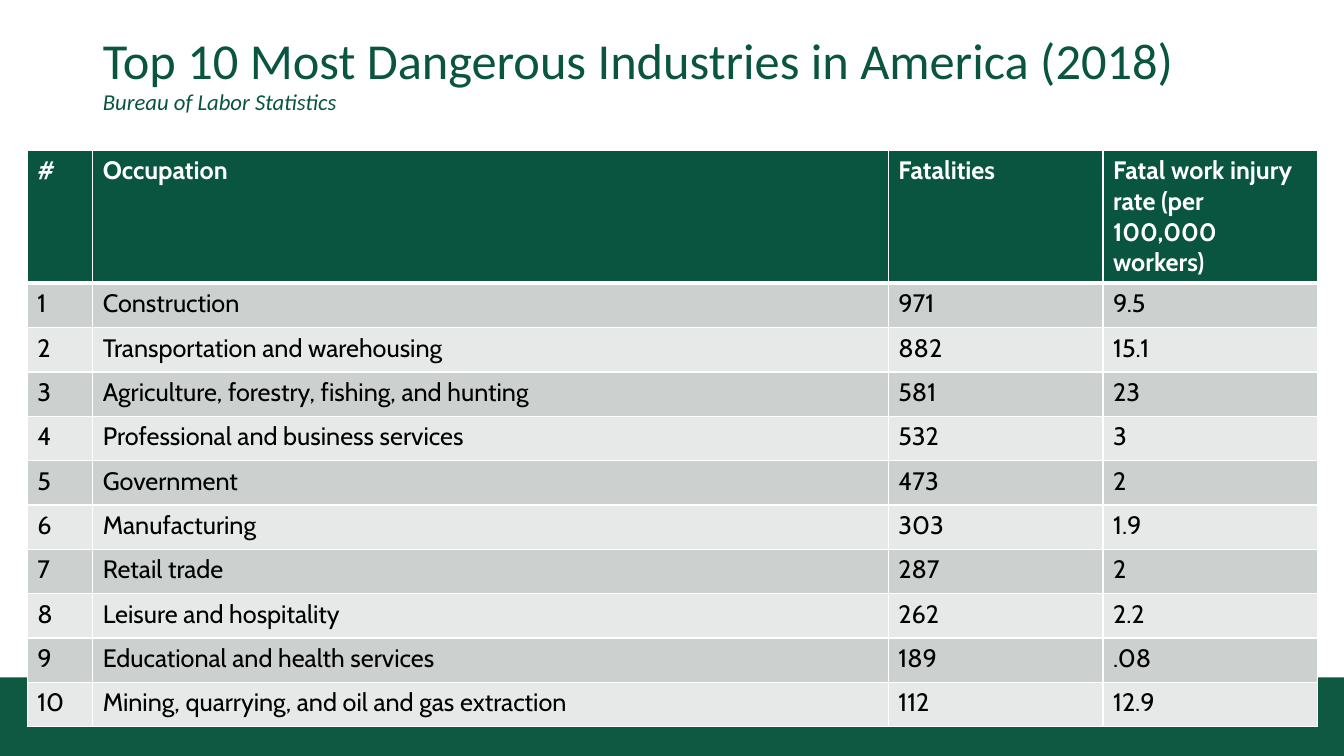
import pptx
import pptx.dml.color
import pptx.enum.shapes
import pptx.enum.text
import pptx.oxml
import pptx.oxml.ns
import pptx.util
from pptx.util import Inches

RGBColor = pptx.dml.color.RGBColor
GREEN = RGBColor(0x09, 0x55, 0x40)
FOOTER_GREEN = RGBColor(0x0F, 0x58, 0x42)
WHITE = RGBColor(0xFF, 0xFF, 0xFF)
BLACK = RGBColor(0x00, 0x00, 0x00)
DARK_BAND = RGBColor(0xCC, 0xD1, 0xCF)
LIGHT_BAND = RGBColor(0xE7, 0xE9, 0xE8)

COLUMN_WIDTHS = (0.65, 7.89, 2.13, 2.13)
ROW_HEIGHT = 0.44
HEADER = ("#", "Occupation", "Fatalities", "Fatal work injury rate (per 100,000 workers)")
INDUSTRIES = (
    ("Construction", "971", "9.5"),
    ("Transportation and warehousing", "882", "15.1"),
    ("Agriculture, forestry, fishing, and hunting", "581", "23"),
    ("Professional and business services", "532", "3"),
    ("Government", "473", "2"),
    ("Manufacturing", "303", "1.9"),
    ("Retail trade", "287", "2"),
    ("Leisure and hospitality", "262", "2.2"),
    ("Educational and health services", "189", ".08"),
    ("Mining, quarrying, and oil and gas extraction", "112", "12.9"),
)


def add_run(p, text, font, size, color, bold=False, italic=False):
    r = p.add_run()
    r.text = text
    r.font.name = font
    r.font.size = pptx.util.Pt(size)
    r.font.color.rgb = color
    r.font.bold = bold
    r.font.italic = italic


def add_footer_band(s):
    sp = s.shapes.add_shape(
        pptx.enum.shapes.MSO_SHAPE.RECTANGLE,
        Inches(0), Inches(6.72), Inches(13.33), Inches(0.78))
    sp.shadow.inherit = False
    sp.fill.solid()
    sp.fill.fore_color.rgb = FOOTER_GREEN
    sp.line.fill.background()


def fill_title(s):
    sp = s.shapes.title
    sp.left, sp.top = Inches(0.92), Inches(0.13)
    sp.width, sp.height = Inches(11.5), Inches(1.24)
    tf = sp.text_frame
    tf.word_wrap = True
    tf.vertical_anchor = pptx.enum.text.MSO_ANCHOR.MIDDLE
    p = tf.paragraphs[0]
    p.alignment = pptx.enum.text.PP_ALIGN.LEFT
    p.line_spacing = 0.9
    add_run(p, "Top 10 Most Dangerous Industries in America (2018)", "Calibri", 36, GREEN)
    p.add_line_break()
    add_run(p, "Bureau of Labor Statistics", "Calibri", 16.2, GREEN, italic=True)


def set_borders(cell, top, bottom):
    tcPr = cell._tc.get_or_add_tcPr()
    sides = (("lnL", 1), ("lnR", 1), ("lnT", top), ("lnB", bottom))
    for i, (side, width) in enumerate(sides):
        tcPr.insert(i, pptx.oxml.parse_xml(
            f'<a:{side} {pptx.oxml.ns.nsdecls("a")} w="{pptx.util.Pt(width)}">'
            f'<a:solidFill><a:srgbClr val="{WHITE}"/></a:solidFill></a:{side}>'))


def fill_cell(cell, text, fill, color, bold, top, bottom):
    cell.fill.solid()
    cell.fill.fore_color.rgb = fill
    set_borders(cell, top, bottom)
    add_run(cell.text_frame.paragraphs[0], text, "Cabin", 18, color, bold)


def add_industry_table(s):
    rows = [HEADER] + [(str(n), *row) for n, row in enumerate(INDUSTRIES, 1)]
    table = s.shapes.add_table(
        len(rows), len(HEADER), Inches(0.27), Inches(1.49),
        Inches(sum(COLUMN_WIDTHS)), Inches(ROW_HEIGHT * len(rows))).table
    for column, width in zip(table.columns, COLUMN_WIDTHS):
        column.width = Inches(width)
    for i, row in enumerate(rows):
        table.rows[i].height = Inches(ROW_HEIGHT)
        header = i == 0
        band = DARK_BAND if i % 2 else LIGHT_BAND
        for j, text in enumerate(row):
            fill_cell(
                table.cell(i, j), text,
                fill=GREEN if header else band,
                color=WHITE if header else BLACK,
                bold=header,
                top=3 if i == 1 else 1,
                bottom=3 if header else 1)


def main():
    prs = pptx.Presentation()
    prs.slide_width, prs.slide_height = Inches(13.33), Inches(7.5)
    s = prs.slides.add_slide(prs.slide_layouts[5])
    add_footer_band(s)
    fill_title(s)
    add_industry_table(s)
    prs.save("out.pptx")


if __name__ == "__main__":
    main()
